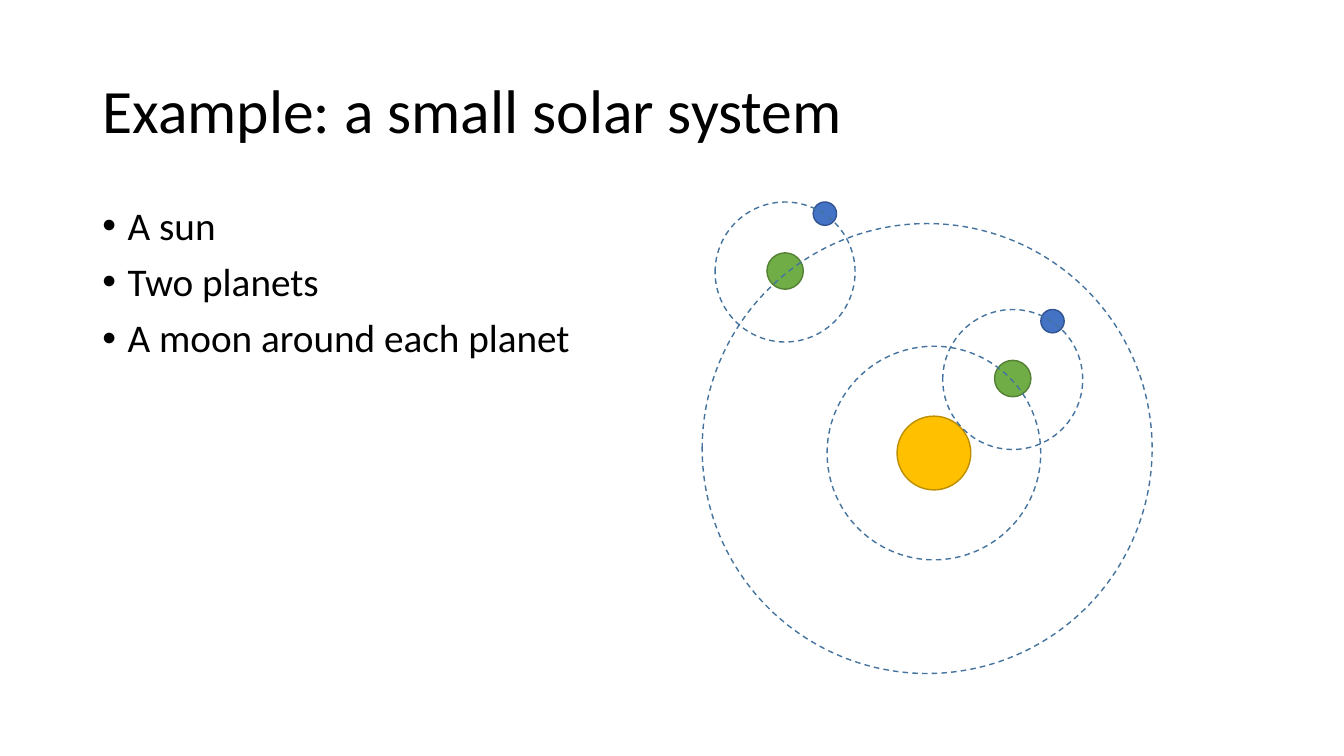
from lxml import etree
from pptx import Presentation
from pptx.dml.color import RGBColor
from pptx.enum import dml, shapes, text
from pptx.oxml.ns import qn
from pptx.util import Pt

SUN, PLANET, MOON = ("FFC000", "BD8E00"), ("70AD47", "538035"), ("4472C4", "325491")
ORBIT = "43739E"


def rgb(value):
    return RGBColor.from_string(value)


def place(sp, box, anchor):
    sp.left, sp.top, sp.width, sp.height = (Pt(v) for v in box)
    tf = sp.text_frame
    tf.word_wrap = True
    tf.auto_size = text.MSO_AUTO_SIZE.NONE
    tf.vertical_anchor = anchor
    return tf


def write(p, words, size):
    p.alignment = text.PP_ALIGN.LEFT
    p.line_spacing = 0.9
    r = p.add_run()
    r.text = words
    r.font.name, r.font.size = "Calibri", Pt(size)
    r.font.color.rgb = rgb("000000")


def add_title(s, box, words):
    tf = place(s.shapes.title, box, text.MSO_ANCHOR.MIDDLE)
    write(tf.paragraphs[0], words, 44)


def add_bullets(s, box, items):
    tf = place(s.placeholders[1], box, text.MSO_ANCHOR.TOP)
    for i, item in enumerate(items):
        p = tf.add_paragraph() if i else tf.paragraphs[0]
        write(p, item, 28)
        p.space_before = Pt(10)
        pPr = p._p.get_or_add_pPr()
        pPr.set("marL", str(Pt(18)))
        pPr.set("indent", str(-Pt(18)))
        etree.SubElement(pPr, qn("a:buFont")).set("typeface", "Arial")
        etree.SubElement(pPr, qn("a:buChar")).set("char", "•")


def add_circle(s, cx, cy, d):
    sp = s.shapes.add_shape(shapes.MSO_SHAPE.OVAL, Pt(cx - d / 2), Pt(cy - d / 2), Pt(d), Pt(d))
    sp.shadow.inherit = False
    sp.line.width = Pt(1)
    return sp


def add_globe(s, cx, cy, d, colors):
    sp = add_circle(s, cx, cy, d)
    sp.fill.solid()
    sp.fill.fore_color.rgb, sp.line.color.rgb = (rgb(c) for c in colors)


def add_orbit(s, cx, cy, d):
    sp = add_circle(s, cx, cy, d)
    sp.fill.background()
    sp.line.color.rgb = rgb(ORBIT)
    sp.line.dash_style = dml.MSO_LINE.DASH


def add_planet(s, cx, cy):
    """Planet centred on (cx, cy), with its moon and the moon's orbit."""
    add_globe(s, cx, cy, 26, PLANET)
    add_globe(s, cx + 28.4, cy - 41, 16.7, MOON)
    add_orbit(s, cx, cy + 0.7, 100)


def add_solar_system(s, left, top):
    sun_x, sun_y = left + 165.4, top + 179
    add_globe(s, sun_x, sun_y, 52.7, SUN)
    add_planet(s, left + 59.1, top + 49)
    add_orbit(s, left + 160.6, top + 175.8, 321.4)
    add_planet(s, left + 221.7, top + 125.8)
    add_orbit(s, sun_x, sun_y, 152.6)


def main():
    prs = Presentation()
    prs.slide_width, prs.slide_height = Pt(960), Pt(540)
    s = prs.slides.add_slide(prs.slide_layouts[1])
    add_title(s, (66, 28.75, 828, 104.4), "Example: a small solar system")
    add_bullets(s, (66, 143.75, 828, 342.6),
                ["A sun", "Two planets", "A moon around each planet"])
    add_solar_system(s, 501.7, 144.6)
    prs.save("out.pptx")


if __name__ == "__main__":
    main()
